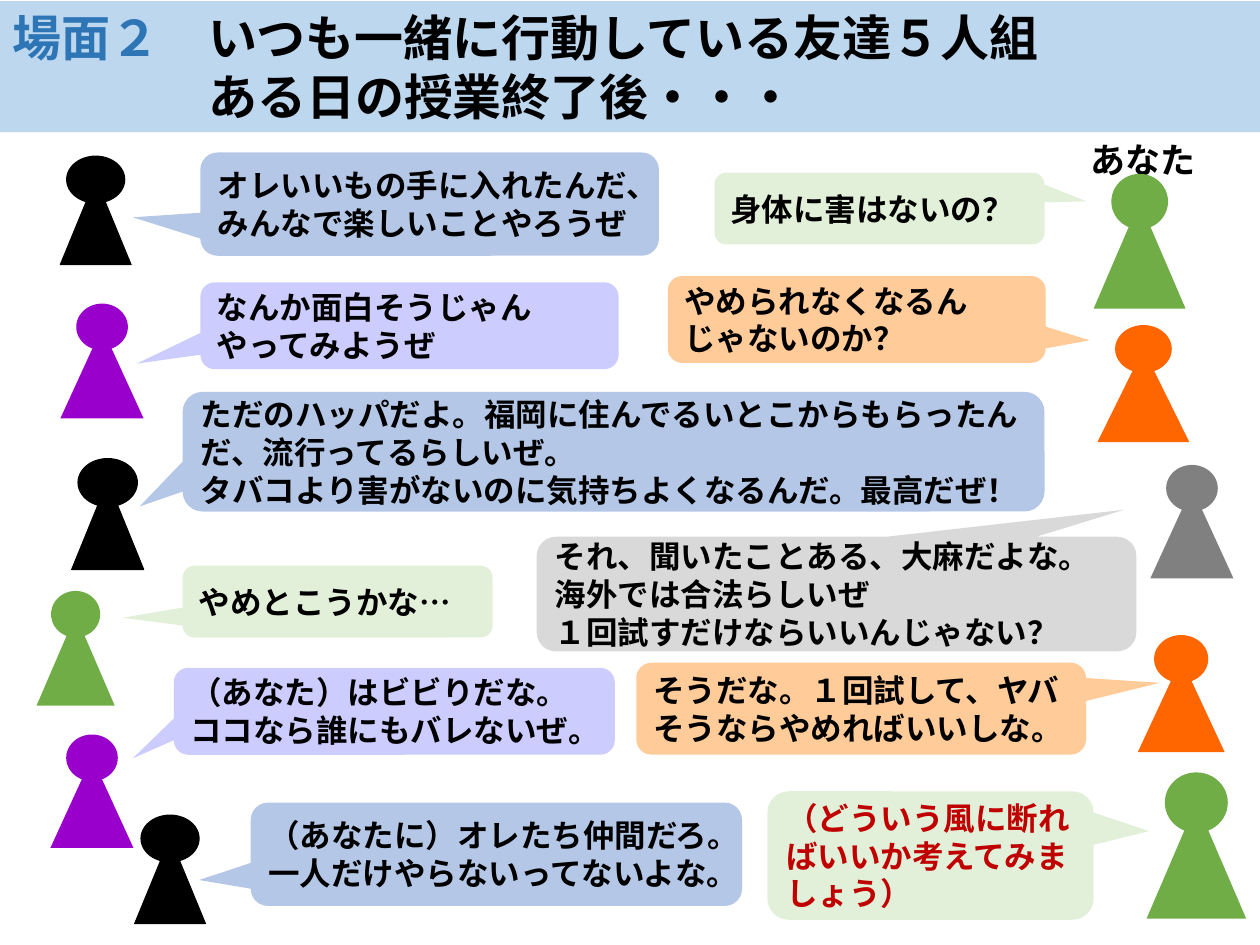
from pptx import Presentation
from pptx import util as u
from pptx.dml.color import RGBColor
from pptx.enum import shapes, text
from pptx.oxml.ns import qn
from lxml import etree

FONT = "Noto Sans CJK JP"
BLACK, GREEN, ORANGE, PURPLE, GRAY = "000000", "70AD47", "FF6600", "9900CC", "808080"
BLUE_BUBBLE, GREEN_BUBBLE, ORANGE_BUBBLE = "B4C7E7", "E2F0D9", "FFCC99"
PURPLE_BUBBLE, GRAY_BUBBLE, RED = "CCCCFF", "D9D9D9", "C00000"

prs = Presentation()
prs.slide_width, prs.slide_height = u.Inches(10), u.Inches(7.5)
slide = prs.slides.add_slide(prs.slide_layouts[6])


def add_filled(parent, preset, box, color):
    shape = parent.shapes.add_shape(preset, *[u.Inches(v) for v in box])
    shape.shadow.inherit = False
    shape.fill.solid()
    shape.fill.fore_color.rgb = RGBColor.from_string(color)
    shape.line.fill.background()
    return shape


def style_text(frame, size, color=BLACK, align=text.PP_ALIGN.LEFT):
    """Set the bold face and the line pitch of 1.2 for all paragraphs."""
    frame.word_wrap = True
    for paragraph in frame.paragraphs:
        paragraph.alignment = align
        paragraph.line_spacing = u.Pt(size * 1.2)
        for run in paragraph.runs:
            run.font.size, run.font.bold, run.font.name = u.Pt(size), True, FONT
            run.font.color.rgb = RGBColor.from_string(color)
            east_asian = etree.SubElement(run.font._element, qn("a:ea"))
            east_asian.set("typeface", FONT)


# Title band: the second line starts below the fifth character of the first
title = add_filled(slide, shapes.MSO_SHAPE.RECTANGLE, (0, 0.01, 10, 1.04), "BDD7EE").text_frame
title.vertical_anchor = text.MSO_ANCHOR.TOP
scene_line, day_line = title.paragraphs[0], title.add_paragraph()
for part in ("場面２　", "いつも一緒に行動している友達５人組"):
    scene_line.add_run().text = part
day_line.text = "ある日の授業終了後・・・"
style_text(title, 28)
scene_line.runs[0].font.color.rgb = RGBColor.from_string("2E75B6")
day_line._p.get_or_add_pPr().set("marL", str(u.Pt(28 * 4)))

you = slide.shapes.add_textbox(*[u.Inches(v) for v in (8.44, 1.05, 1.27, 0.44)]).text_frame
you.text = "あなた"
style_text(you, 20, align=text.PP_ALIGN.CENTER)

# Speech bubbles: box, tail tip as a share of the box from its centre, colour, words
bubbles = [
    ((1.59, 1.21, 3.64, 0.82), (-0.647, 0.128), BLUE_BUBBLE,
     "オレいいもの手に入れたんだ、\nみんなで楽しいことやろうぜ"),
    ((5.67, 1.37, 2.62, 0.57), (0.627, -0.1), GREEN_BUBBLE, "身体に害はないの？"),
    ((1.59, 2.24, 3.32, 0.69), (-0.652, 0.436), PURPLE_BUBBLE,
     "なんか面白そうじゃん\nやってみようぜ"),
    ((5.3, 2.19, 3, 0.69), (0.616, 0.24), ORANGE_BUBBLE, "やめられなくなるんじゃないのか？"),
    ((4.26, 4.26, 4.76, 0.91), (0.479, -0.735), GRAY_BUBBLE,
     "それ、聞いたことある、大麻だよな。\n海外では合法らしいぜ\n１回試すだけならいいんじゃない？"),
    ((1.45, 3.11, 6.84, 0.95), (-0.55, 0.458), BLUE_BUBBLE,
     "ただのハッパだよ。福岡に住んでるいとこからもらったんだ、流行ってるらしいぜ。\n"
     "タバコより害がないのに気持ちよくなるんだ。最高だぜ！"),
    ((1.45, 4.49, 2.46, 0.57), (-0.694, 0.225), GREEN_BUBBLE, "やめとこうかな…"),
    ((1.38, 5.3, 3.5, 0.69), (-0.593, 0.541), PURPLE_BUBBLE,
     "（あなた）はビビりだな。ココなら誰にもバレないぜ。"),
    ((5.05, 5.26, 3.57, 0.73), (0.664, -0.281), ORANGE_BUBBLE,
     "そうだな。１回試して、ヤバそうならやめればいいしな。"),
    ((1.99, 6.37, 3.9, 0.82), (-0.605, 0.249), BLUE_BUBBLE,
     "（あなたに）オレたち仲間だろ。\n一人だけやらないってないよな。"),
    ((6.09, 6.28, 2.59, 1.02), (0.67, -0.19), GREEN_BUBBLE,
     "（どういう風に断ればいいか考えてみましょう）"),
]
for box, tail, color, words in bubbles:
    bubble = add_filled(slide, shapes.MSO_SHAPE.ROUNDED_RECTANGULAR_CALLOUT, box, color)
    bubble.adjustments[0], bubble.adjustments[1] = tail
    bubble.text_frame.text = words
    bubble.text_frame.vertical_anchor = text.MSO_ANCHOR.MIDDLE
    style_text(bubble.text_frame, 18, RED if words.startswith("（どう") else BLACK)

# People: body box, then top, width and height of the head centred above it
people = [
    ((0.48, 1.42, 0.56, 0.68), (1.24, 0.46, 0.37), BLACK),
    ((8.71, 2.77, 0.73, 0.74), (2.58, 0.45, 0.38), ORANGE),
    ((0.48, 2.6, 0.66, 0.72), (2.41, 0.41, 0.37), PURPLE),
    ((9.13, 3.87, 0.66, 0.72), (3.69, 0.41, 0.37), GRAY),
    ((0.57, 3.82, 0.57, 0.7), (3.64, 0.47, 0.38), BLACK),
    ((0.4, 6.01, 0.66, 0.72), (5.83, 0.41, 0.37), PURPLE),
    ((9.03, 5.23, 0.69, 0.74), (5.04, 0.43, 0.38), ORANGE),
    ((1.07, 6.65, 0.56, 0.68), (6.47, 0.46, 0.37), BLACK),
    ((8.68, 1.6, 0.73, 0.85), (1.38, 0.45, 0.44), GREEN),
    ((9.1, 6.37, 0.79, 0.92), (6.13, 0.5, 0.48), GREEN),
    ((0.29, 4.88, 0.62, 0.72), (4.69, 0.39, 0.37), GREEN),
]
for body, (head_top, head_width, head_height), color in people:
    person = slide.shapes.add_group_shape()
    head_left = body[0] + (body[2] - head_width) / 2
    head = (head_left, head_top, head_width, head_height)
    add_filled(person, shapes.MSO_SHAPE.ISOSCELES_TRIANGLE, body, color)
    add_filled(person, shapes.MSO_SHAPE.OVAL, head, color)
    if color == BLACK:
        for part in person.shapes:
            part.line.color.rgb = RGBColor.from_string(BLACK)
            part.line.width = u.Pt(0.75)

prs.save("out.pptx")
